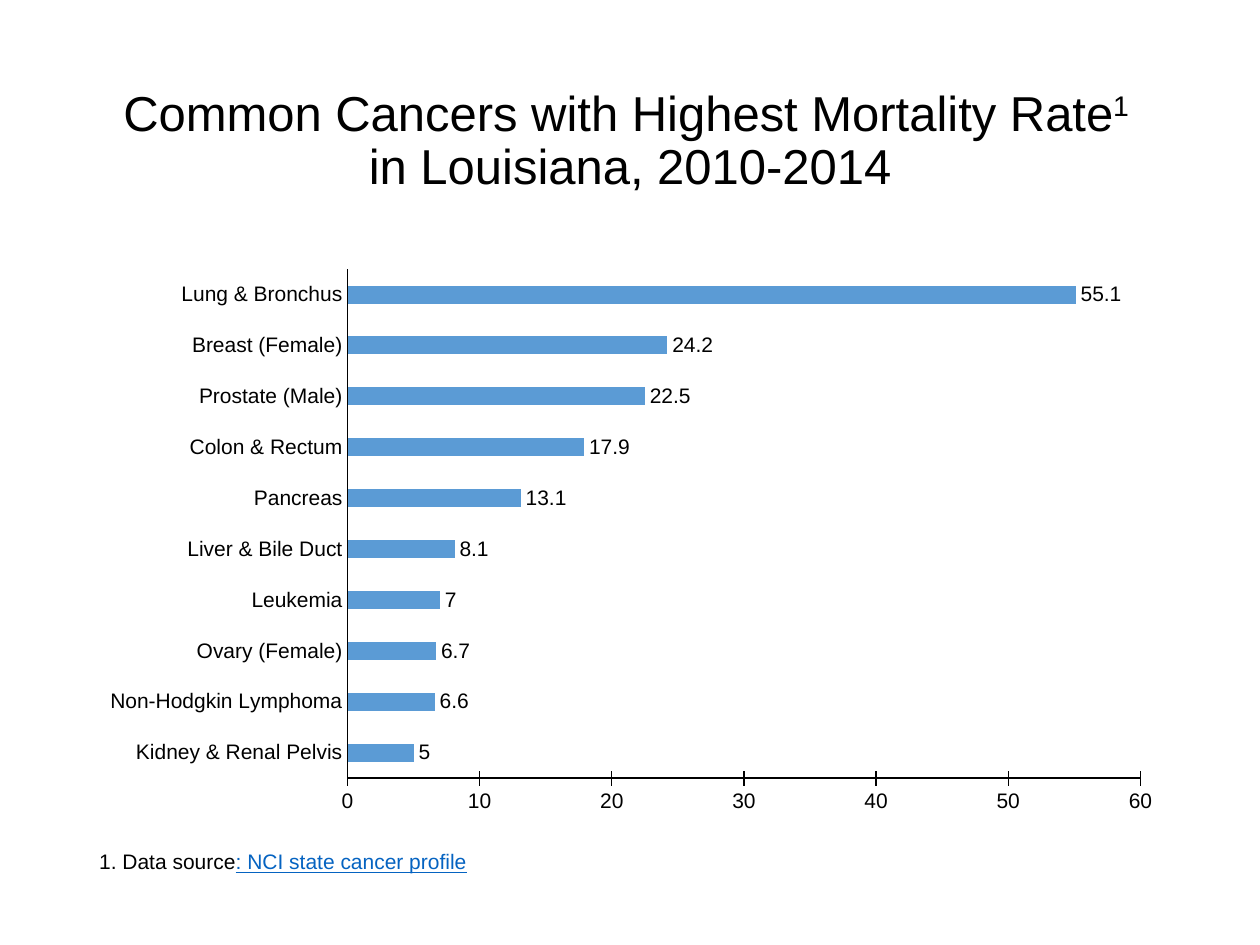
import dataclasses

import lxml.etree
import pptx
import pptx.chart.data
import pptx.dml.color
import pptx.enum.chart
import pptx.enum.text
import pptx.oxml
import pptx.oxml.ns
import pptx.util

Cm, Pt = pptx.util.Cm, pptx.util.Pt
qn = pptx.oxml.ns.qn


@dataclasses.dataclass(frozen=True)
class Theme:
    font: str = "Arial"
    text: str = "000000"
    bar: str = "5B9BD5"
    link: str = "0563C1"
    title_size: int = 28
    body_size: int = 12
    line_width: float = 0.75


MORTALITY_RATES = {
    "Kidney & Renal Pelvis": 5,
    "Non-Hodgkin Lymphoma": 6.6,
    "Ovary (Female)": 6.7,
    "Leukemia": 7,
    "Liver & Bile Duct": 8.1,
    "Pancreas": 13.1,
    "Colon & Rectum": 17.9,
    "Prostate (Male)": 22.5,
    "Breast (Female)": 24.2,
    "Lung & Bronchus": 55.1,
}


class SlideBuilder:
    def __init__(self, slide, theme):
        self.slide, self.theme = slide, theme

    def style(self, font, size, color=None):
        font.name, font.size = self.theme.font, Pt(size)
        font.color.rgb = self.rgb(color or self.theme.text)

    def rgb(self, color):
        return pptx.dml.color.RGBColor.from_string(color)

    def place(self, sp, left, top, width, height):
        sp.left, sp.top, sp.width, sp.height = map(Cm, (left, top, width, height))

    def title(self, first, mark, second, *box):
        sp = self.slide.shapes.title
        self.place(sp, *box)
        tf = sp.text_frame
        tf.auto_size = pptx.enum.text.MSO_AUTO_SIZE.NONE
        tf.vertical_anchor = pptx.enum.text.MSO_ANCHOR.MIDDLE
        p = tf.paragraphs[0]
        p.alignment = pptx.enum.text.PP_ALIGN.CENTER
        p.line_spacing = 0.9
        for text in (first, mark, second):
            if text == second:
                p.add_line_break()
            r = p.add_run()
            r.text = text
            self.style(r.font, self.theme.title_size)
            if text == mark:
                r._r.get_or_add_rPr().set("baseline", "30000")
        # The line break takes the title size too
        br = p._p.find(qn("a:br"))
        lxml.etree.SubElement(br, qn("a:rPr"), sz=str(self.theme.title_size * 100))

    def bar_chart(self, values, plot, *box):
        data = pptx.chart.data.CategoryChartData()
        data.categories = list(values)
        data.add_series("Series 1", list(values.values()))
        kind = pptx.enum.chart.XL_CHART_TYPE.BAR_CLUSTERED
        chart = self.slide.shapes.add_chart(kind, *map(Cm, box), data).chart
        chart.has_legend = chart.has_title = False
        self.style(chart.font, self.theme.body_size)

        # Bars and value labels
        bars = chart.plots[0]
        bars.gap_width = 182
        bars.vary_by_categories = False
        fill = bars.series[0].format.fill
        fill.solid()
        fill.fore_color.rgb = self.rgb(self.theme.bar)
        bars.has_data_labels = True
        labels = bars.data_labels
        labels.show_value = True
        labels.position = pptx.enum.chart.XL_LABEL_POSITION.OUTSIDE_END
        self.style(labels.font, self.theme.body_size)

        # Axes
        marks = pptx.enum.chart.XL_TICK_MARK
        for axis, tick in ((chart.category_axis, marks.NONE), (chart.value_axis, marks.CROSS)):
            axis.has_major_gridlines = False
            axis.major_tick_mark = tick
            axis.minor_tick_mark = marks.NONE
            axis.format.line.color.rgb = self.rgb(self.theme.text)
            axis.format.line.width = Pt(self.theme.line_width)
            self.style(axis.tick_labels.font, self.theme.body_size)
        chart.value_axis.minimum_scale, chart.value_axis.maximum_scale = 0, 60
        chart.value_axis.major_unit = 10
        self.fix_plot_area(chart, plot)

    def fix_plot_area(self, chart, plot):
        area = chart._chartSpace.find(".//" + qn("c:plotArea"))
        for old in area.findall(qn("c:layout")):
            area.remove(old)
        layout = lxml.etree.Element(qn("c:layout"))
        manual = lxml.etree.SubElement(layout, qn("c:manualLayout"))
        settings = {"layoutTarget": "inner", "xMode": "edge", "yMode": "edge"}
        settings.update(zip("xywh", plot))
        for tag, val in settings.items():
            lxml.etree.SubElement(manual, qn("c:" + tag), val=str(val))
        area.insert(0, layout)

    def source_note(self, lead, linked, *box):
        tf = self.slide.shapes.add_textbox(*map(Cm, box)).text_frame
        tf.word_wrap = False
        tf.auto_size = pptx.enum.text.MSO_AUTO_SIZE.SHAPE_TO_FIT_TEXT
        p = tf.paragraphs[0]
        for text, color in ((lead, self.theme.text), (linked, self.theme.link)):
            r = p.add_run()
            r.text = text
            self.style(r.font, self.theme.body_size, color)
            r.font.underline = text == linked


def main():
    prs = pptx.Presentation()
    prs.slide_width, prs.slide_height = Cm(25.4), Cm(19.05)
    slide = prs.slides.add_slide(prs.slide_layouts.get_by_name("Title Only"))
    builder = SlideBuilder(slide, Theme())
    left, width = 1.75, 21.9

    # Heading
    builder.title("Common Cancers with Highest Mortality Rate", "1 ",
                  "in Louisiana, 2010-2014", left, 1.02, width, 3.68)
    # Mortality rate by cancer
    builder.bar_chart(MORTALITY_RATES, (0.24, 0.03, 0.73, 0.89),
                      left, 5.08, width, 11.53)
    # Footnote
    builder.source_note("1. Data source", ": NCI state cancer profile",
                        left, 16.99, 7.98, 0.76)
    prs.save("out.pptx")


if __name__ == "__main__":
    main()
